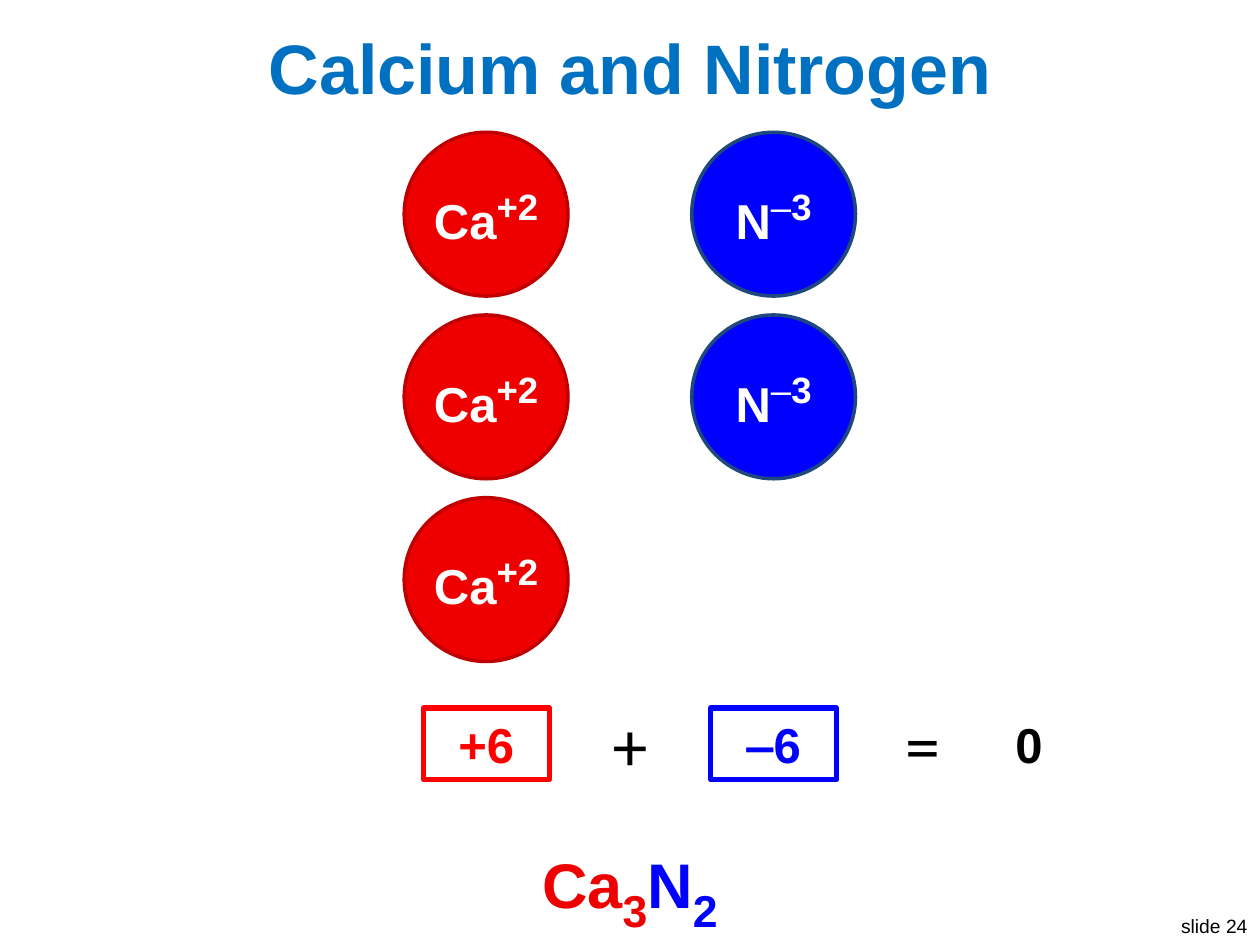
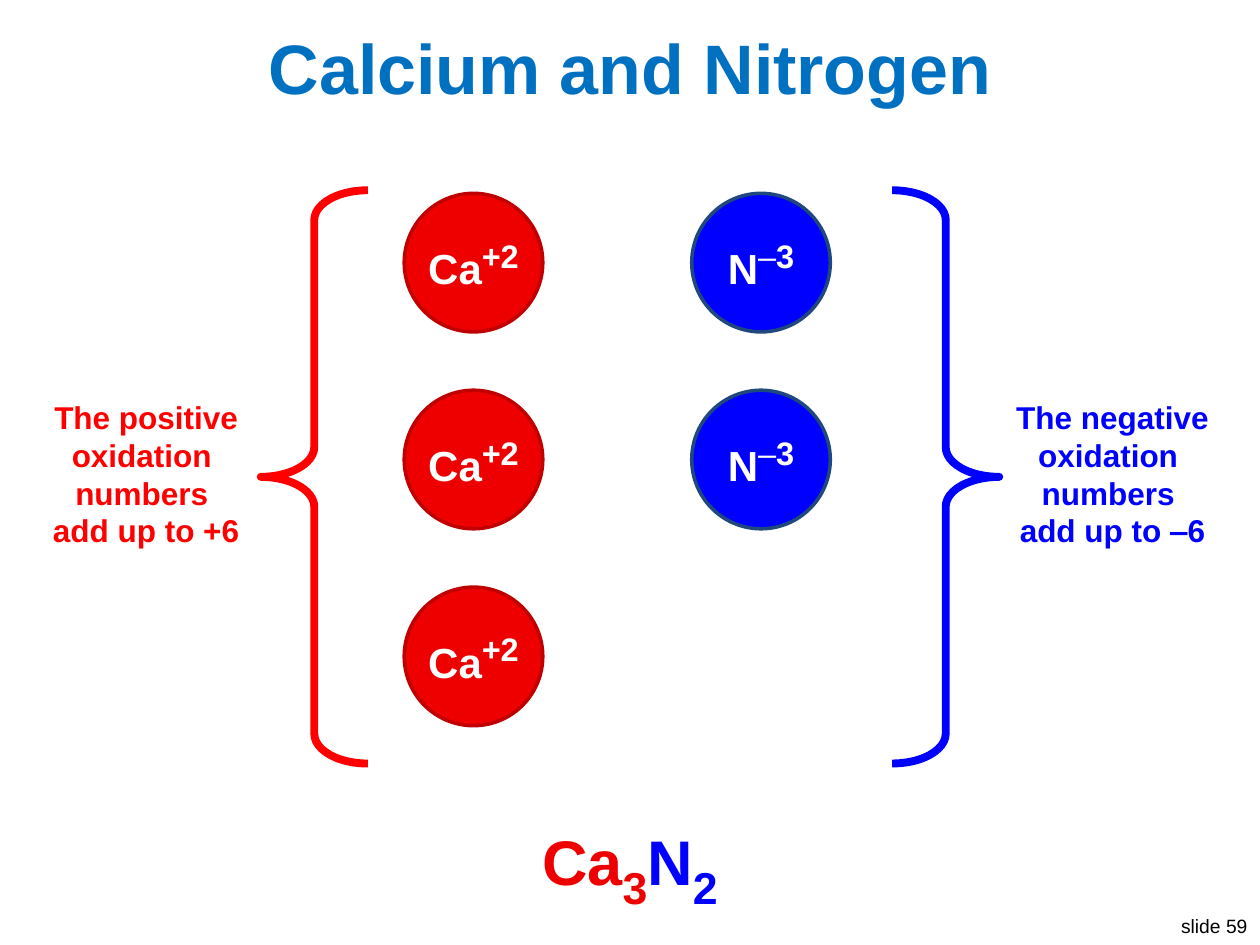
from pptx import Presentation
from pptx.dml.color import RGBColor
from pptx.enum.shapes import MSO_SHAPE
from pptx.enum.text import MSO_ANCHOR, MSO_AUTO_SIZE, PP_ALIGN
from pptx.util import Pt

OVAL, RECTANGLE = MSO_SHAPE.OVAL, MSO_SHAPE.RECTANGLE
LEFT_BRACE, RIGHT_BRACE = MSO_SHAPE.LEFT_BRACE, MSO_SHAPE.RIGHT_BRACE
TOP, MIDDLE = MSO_ANCHOR.TOP, MSO_ANCHOR.MIDDLE
LEFT, CENTER, RIGHT = PP_ALIGN.LEFT, PP_ALIGN.CENTER, PP_ALIGN.RIGHT
NO_AUTOFIT = MSO_AUTO_SIZE.NONE

TITLE_BLUE = RGBColor(0x00, 0x70, 0xC0)
CALCIUM_RED = RGBColor(0xEE, 0x00, 0x00)
CALCIUM_EDGE = RGBColor(0xC0, 0x00, 0x00)
NITROGEN_EDGE = RGBColor(0x1F, 0x49, 0x7D)
RED = RGBColor(0xFF, 0x00, 0x00)
BLUE = RGBColor(0x00, 0x00, 0xFF)
WHITE = RGBColor(0xFF, 0xFF, 0xFF)
BLACK = RGBColor(0x00, 0x00, 0x00)

FONT = "Arial"
SYMBOL_FONT = "Calibri"
TITLE_ONLY = 5
SUPERSCRIPT, SUBSCRIPT = 30, -25
CALCIUM_LEFT, NITROGEN_LEFT = 231, 395.3
BRACE_CURVE = 0.278


def box_in_points(left, top, width, height):
    return Pt(left), Pt(top), Pt(width), Pt(height)


def format_run(run, size, color, bold=True, font=FONT, baseline=0):
    run.font.name = font
    run.font.size = Pt(size)
    run.font.bold = bold
    run.font.color.rgb = color
    if baseline:
        run._r.get_or_add_rPr().set("baseline", str(baseline * 1000))


def add_run(paragraph, text, size, color, **style):
    run = paragraph.add_run()
    run.text = text
    format_run(run, size, color, **style)


def write_lines(shape, text, size, color, align=CENTER, **style):
    """Write unwrapped text from the top of the shape, one paragraph a line."""
    frame = shape.text_frame
    frame.text = text
    frame.word_wrap = False
    frame.vertical_anchor = TOP
    for paragraph in frame.paragraphs:
        paragraph.alignment = align
        for run in paragraph.runs:
            format_run(run, size, color, **style)


def add_label(shapes, box, text, size, color, **style):
    label = shapes.add_textbox(*box_in_points(*box))
    write_lines(label, text, size, color, **style)


def add_outlined(shapes, kind, box, line_color, line_width, fill_color=None):
    shape = shapes.add_shape(kind, *box_in_points(*box))
    shape.shadow.inherit = False
    shape.line.color.rgb = line_color
    shape.line.width = Pt(line_width)
    if fill_color is None:
        shape.fill.background()
    else:
        shape.fill.solid()
        shape.fill.fore_color.rgb = fill_color
    return shape


def add_compound_slide(presentation, number):
    """Add a slide with the shared title and slide number."""
    slide = presentation.slides.add_slide(presentation.slide_layouts[TITLE_ONLY])
    title = slide.shapes.title
    title.left, title.top, title.width, title.height = box_in_points(14.4, 9.4, 691.2, 57.6)
    frame = title.text_frame
    frame.text = "Calcium and Nitrogen"
    frame.auto_size = NO_AUTOFIT
    frame.vertical_anchor = MIDDLE
    frame.paragraphs[0].alignment = CENTER
    format_run(frame.paragraphs[0].runs[0], 40, TITLE_BLUE)
    add_label(slide.shapes, (666, 519.1, 54, 20.9), f"slide {number}", 11, BLACK,
              align=RIGHT, bold=False)
    return slide


def add_formula(slide, top):
    formula = slide.shapes.add_textbox(*box_in_points(270, top, 180, 51))
    formula.text_frame.word_wrap = True
    paragraph = formula.text_frame.paragraphs[0]
    paragraph.alignment = CENTER
    for symbol, count, color in (("Ca", "3", CALCIUM_RED), ("N", "2", BLUE)):
        add_run(paragraph, symbol, 36, color)
        add_run(paragraph, count, 44, color, baseline=SUBSCRIPT)


def add_ion_column(slide, left, top, diameter, pitch, count, symbol, charge,
                   fill_color, edge_color, text_size):
    """Stack equal ions; charge is a list of (text, bold) pieces."""
    for row in range(count):
        box = left, top + row * pitch, diameter, diameter
        ion = add_outlined(slide.shapes, OVAL, box, edge_color, 2, fill_color)
        frame = ion.text_frame
        frame.margin_left = frame.margin_top = frame.margin_right = frame.margin_bottom = 0
        frame.vertical_anchor = MIDDLE
        paragraph = frame.paragraphs[0]
        paragraph.alignment = CENTER
        add_run(paragraph, symbol, text_size, WHITE)
        for text, bold in charge:
            add_run(paragraph, text, text_size + 8, WHITE, bold=bold, baseline=SUPERSCRIPT)


def add_ions(slide, top, diameter, pitch, text_size):
    add_ion_column(slide, CALCIUM_LEFT, top, diameter, pitch, 3, "Ca", [("+2", True)],
                   CALCIUM_RED, CALCIUM_EDGE, text_size)
    add_ion_column(slide, NITROGEN_LEFT, top, diameter, pitch, 2, "N",
                   [("‒", False), ("3", True)], BLUE, NITROGEN_EDGE, text_size)


def add_charge_equation(slide, left, top):
    shapes = slide.shapes.add_group_shape().shapes
    term_top, term_width, term_height = top + 7.2, 72, 41
    for offset, text, color in ((0, "+6", RED), (164.2, "‒6", BLUE)):
        box = left + offset, term_top, term_width, term_height
        term = add_outlined(shapes, RECTANGLE, box, color, 3, WHITE)
        write_lines(term, text, 28, color)
    for offset, sign in ((100.8, "+"), (267.9, "=")):
        add_label(shapes, (left + offset, top, 34.6, 55.4), sign, 40, BLACK,
                  bold=False, font=SYMBOL_FONT)
    add_label(shapes, (left + 331.2, term_top, term_width, term_height), "0", 28, BLACK,
              align=LEFT)


def add_braced_note(slide, kind, brace_left, note_left, top, text, color):
    shapes = slide.shapes.add_group_shape().shapes
    brace = add_outlined(shapes, kind, (brace_left, top, 61.2, 327.6), color, 4.5)
    brace.adjustments[0] = BRACE_CURVE
    brace.adjustments[1] = 0.5
    add_label(shapes, (note_left, top + 115.2, 125.3, 94.3), text, 18, color)


def build_sum_slide(presentation):
    slide = add_compound_slide(presentation, 24)
    add_formula(slide, 471.6)
    add_ions(slide, top=75.6, diameter=93.6, pitch=104.4, text_size=28)
    add_charge_equation(slide, 241.9, 397.4)


def build_brace_slide(presentation):
    slide = add_compound_slide(presentation, 59)
    add_formula(slide, 458.6)
    add_ions(slide, top=110.5, diameter=79.2, pitch=112.5, text_size=24)
    note = "The {}\noxidation \nnumbers \nadd up to {}"
    add_braced_note(slide, RIGHT_BRACE, 509.8, 573.1, 108.7,
                    note.format("negative", "‒6"), BLUE)
    add_braced_note(slide, LEFT_BRACE, 149, 20.9, 108.7,
                    note.format("positive", "+6"), RED)


def main():
    presentation = Presentation()
    presentation.slide_width = Pt(720)
    presentation.slide_height = Pt(540)
    build_sum_slide(presentation)
    build_brace_slide(presentation)
    presentation.save("out.pptx")


if __name__ == "__main__":
    main()
